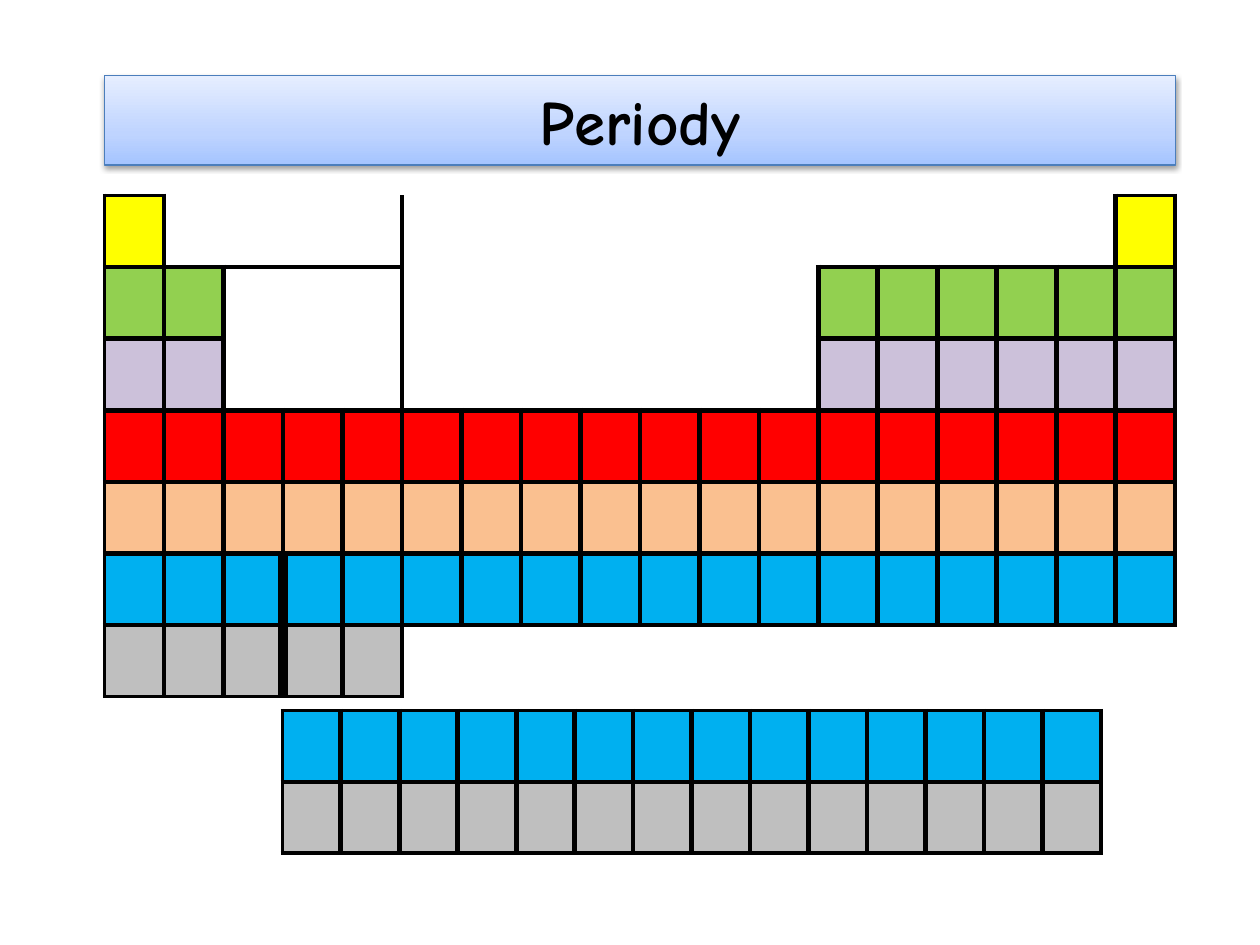
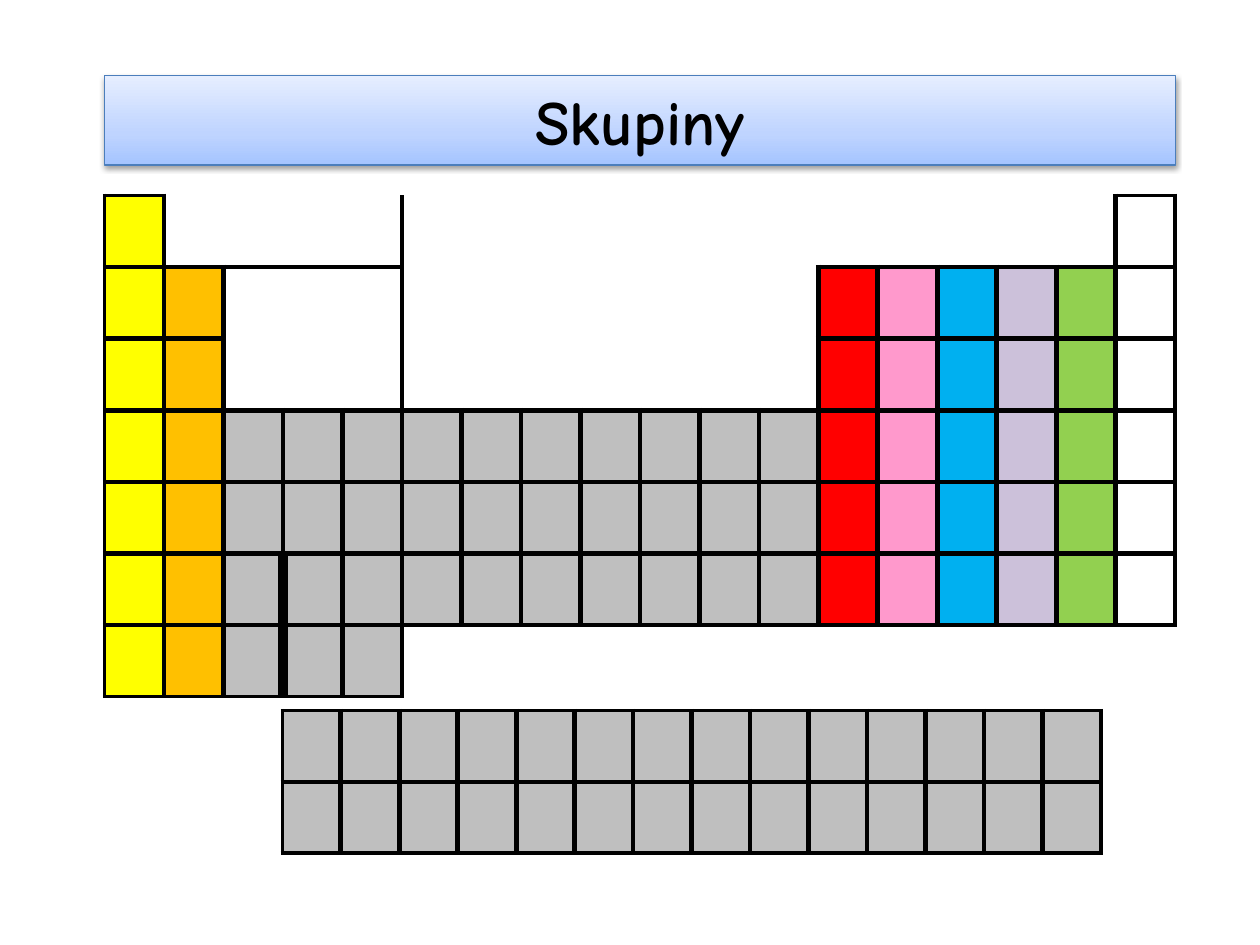
from itertools import product

from lxml.etree import SubElement
from pptx import Presentation
from pptx.dml.color import RGBColor
from pptx.enum.shapes import MSO_SHAPE
from pptx.enum.text import MSO_ANCHOR, MSO_AUTO_SIZE, PP_ALIGN
from pptx.oxml import parse_xml
from pptx.oxml.ns import nsdecls, qn
from pptx.util import Inches, Pt

BLACK = RGBColor(0x00, 0x00, 0x00)
WHITE = RGBColor(0xFF, 0xFF, 0xFF)
YELLOW = RGBColor(0xFF, 0xFF, 0x00)
ORANGE = RGBColor(0xFF, 0xC0, 0x00)
PEACH = RGBColor(0xFA, 0xC0, 0x90)
RED = RGBColor(0xFF, 0x00, 0x00)
PINK = RGBColor(0xFF, 0x99, 0xCC)
BLUE = RGBColor(0x00, 0xB0, 0xF0)
LAVENDER = RGBColor(0xCC, 0xC1, 0xDA)
GREEN = RGBColor(0x92, 0xD0, 0x50)
GREY = RGBColor(0xBF, 0xBF, 0xBF)
BAND_EDGE = RGBColor(0x4B, 0x7E, 0xBC)
BAND_STOPS = ((0, RGBColor(0xA4, 0xC4, 0xFF)), (35, RGBColor(0xBF, 0xD4, 0xFF)),
              (100, RGBColor(0xE6, 0xEE, 0xFF)))

PERIODS = [YELLOW, GREEN, LAVENDER, RED, PEACH, BLUE, GREY]
GROUPS = [YELLOW, ORANGE] + [GREY] * 10 + [RED, PINK, BLUE, LAVENDER, GREEN, WHITE]
SERIES_LENGTH = 14
# Row, column, row span, column span, ruled sides
GAPS = [(0, 1, 1, 4, "LB"), (0, 5, 3, 7, "B"), (0, 12, 1, 5, "RB"),
        (1, 2, 2, 3, "LB"), (6, 5, 1, 13, "LT")]
SERIES_BREAK = {(row, col, side) for row in (5, 6) for col, side in ((2, "R"), (3, "L"))}
PLAIN_TABLE = "{2D5ABB26-0587-4C30-8999-92F81FD0307C}"


class PeriodicDeck:
    """Holds the shared style and the current slide."""

    font = "Comic Neue"
    left, width = Inches(0.83), Inches(8.5)
    outer, inner, thick = Pt(2.25), Pt(3), Pt(6)

    def __init__(self):
        self.deck = Presentation()
        self.deck.slide_width, self.deck.slide_height = Inches(10), Inches(7.5)

    def add_slide(self):
        self.slide = self.deck.slides.add_slide(self.deck.slide_layouts[6])

    def title(self, wording):
        band = self.slide.shapes.add_shape(
            MSO_SHAPE.RECTANGLE, self.left, Inches(0.6), self.width, Inches(0.71))
        stops = "".join(f'<a:gs pos="{place * 1000}"><a:srgbClr val="{colour}"/></a:gs>'
                        for place, colour in BAND_STOPS)
        properties = band.element.spPr
        properties.append(parse_xml(
            f'<a:gradFill {nsdecls("a")} rotWithShape="1"><a:gsLst>{stops}</a:gsLst>'
            '<a:lin ang="16200000" scaled="0"/></a:gradFill>'))
        band.line.color.rgb = BAND_EDGE
        band.line.width = Pt(0.75)
        band.shadow.inherit = False
        properties.find(qn("a:effectLst")).append(parse_xml(
            f'<a:outerShdw {nsdecls("a")} blurRad="{Pt(3.1)}" dist="{Pt(1.6)}" dir="5400000" '
            f'rotWithShape="0"><a:srgbClr val="{BLACK}"><a:alpha val="38000"/></a:srgbClr>'
            '</a:outerShdw>'))
        frame = band.text_frame
        frame.word_wrap = True
        frame.auto_size = MSO_AUTO_SIZE.SHAPE_TO_FIT_TEXT
        frame.vertical_anchor = MSO_ANCHOR.MIDDLE
        heading = frame.paragraphs[0]
        heading.text = wording
        heading.alignment = PP_ALIGN.CENTER
        heading.font.name, heading.font.size = self.font, Pt(36)
        heading.font.bold = True
        heading.font.color.rgb = BLACK

    def borders(self, cell, widths):
        properties = cell._tc.get_or_add_tcPr()
        for side, width in widths.items():
            line = SubElement(properties, qn(f"a:ln{side}"), w=str(width))
            SubElement(SubElement(line, qn("a:solidFill")), qn("a:srgbClr"), val=str(BLACK))

    def element_grid(self, left, top, width, height, colours, gaps=(), breaks=()):
        rows, cols = len(colours), len(colours[0])
        grid = self.slide.shapes.add_table(rows, cols, left, top, width, height).table
        grid.first_row = grid.horz_banding = False
        grid._tbl.tblPr.find(qn("a:tableStyleId")).text = PLAIN_TABLE
        for column in grid.columns:
            column.width = int(width / cols)
        for period in grid.rows:
            period.height = int(height / rows)

        for row, col, down, across, sides in gaps:
            gap = grid.cell(row, col)
            gap.merge(grid.cell(row + down - 1, col + across - 1))
            self.borders(gap, {side: self.inner for side in sides})
            gap.fill.background()

        for row, col in product(range(rows), range(cols)):
            cell = grid.cell(row, col)
            if cell.is_merge_origin or cell.is_spanned:
                continue
            at_edge = {"L": col == 0, "R": col == cols - 1, "T": row == 0, "B": row == rows - 1}
            self.borders(cell, {
                side: self.thick if (row, col, side) in breaks
                else self.outer if edge else self.inner
                for side, edge in at_edge.items()})
            cell.fill.solid()
            cell.fill.fore_color.rgb = colours[row][col]

    def periodic_table(self, wording, main_colours, series_colours):
        self.add_slide()
        self.element_grid(self.left, Inches(1.55), self.width, Inches(3.98),
                          main_colours, GAPS, SERIES_BREAK)
        self.element_grid(Inches(2.24), Inches(5.64), Inches(6.5), Inches(1.13),
                          [[colour] * SERIES_LENGTH for colour in series_colours])
        self.title(wording)


def main():
    periodic = PeriodicDeck()
    periodic.periodic_table("Periody", [[colour] * len(GROUPS) for colour in PERIODS],
                            PERIODS[-2:])
    periodic.periodic_table("Skupiny", [GROUPS] * len(PERIODS), [GREY, GREY])
    periodic.deck.save("out.pptx")


if __name__ == "__main__":
    main()
